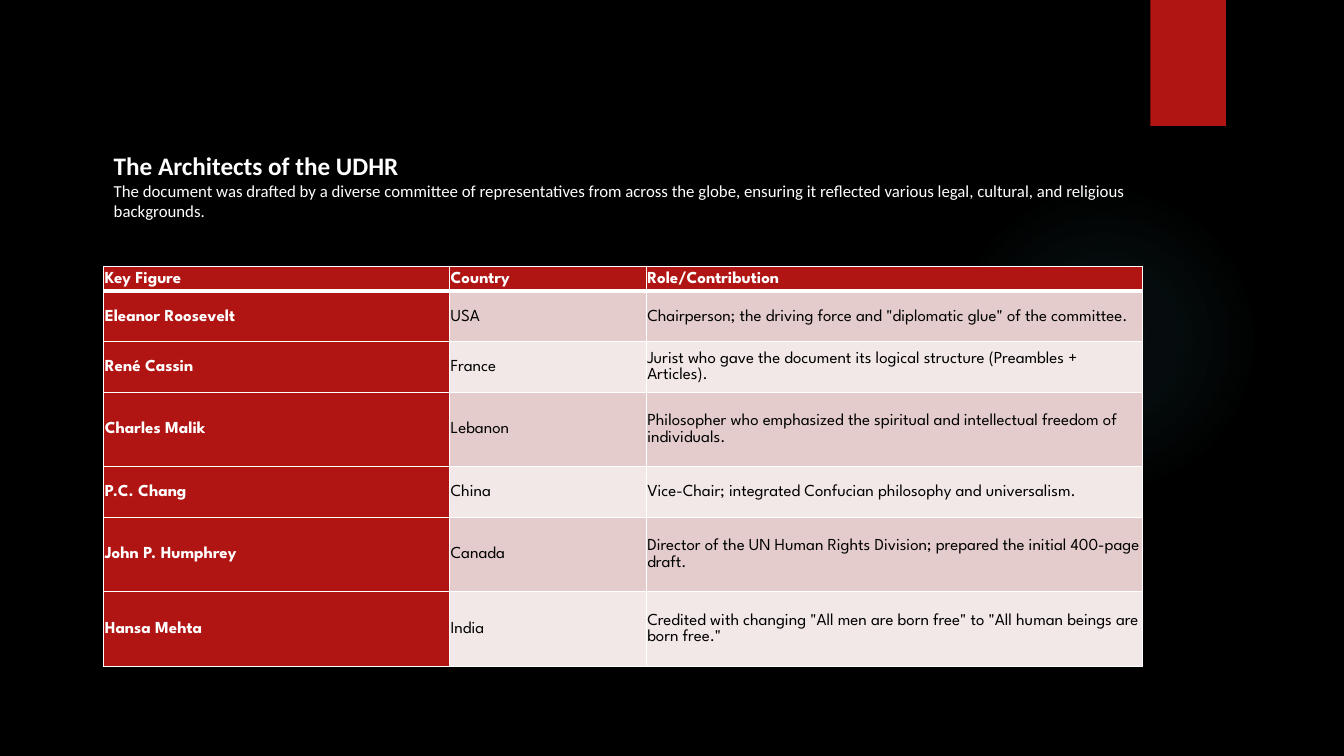
from dataclasses import dataclass

from lxml import etree
from pptx import Presentation
from pptx.dml.color import RGBColor
from pptx.enum.shapes import MSO_SHAPE
from pptx.enum.text import MSO_ANCHOR
from pptx.oxml import parse_xml
from pptx.oxml.ns import nsdecls, qn
from pptx.util import Inches, Pt


@dataclass(frozen=True)
class Theme:
    """Colours, fonts and type sizes of the slide."""
    black: str = "000000"
    white: str = "FFFFFF"
    red: str = "B01513"
    glow: str = "50B9C1"
    bands: tuple = ("E4CCCC", "F2E8E7")
    text_font: str = "Calibri"
    table_font: str = "League Spartan"
    title_size: int = 18
    body_size: int = 12


THEME = Theme()
COLUMN_WIDTHS = (3.43, 1.95, 4.92)
ROW_HEIGHTS = (0.25, 0.5, 0.5, 0.74, 0.5, 0.74, 0.74)
FIGURES = (
    ("Key Figure", "Country", "Role/Contribution"),
    ("Eleanor Roosevelt", "USA", 'Chairperson; the driving force and "diplomatic glue" of the committee.'),
    ("René Cassin", "France", "Jurist who gave the document its logical structure (Preambles + Articles)."),
    ("Charles Malik", "Lebanon", "Philosopher who emphasized the spiritual and intellectual freedom of individuals."),
    ("P.C. Chang", "China", "Vice-Chair; integrated Confucian philosophy and universalism."),
    ("John P. Humphrey", "Canada", "Director of the UN Human Rights Division; prepared the initial 400-page draft."),
    ("Hansa Mehta", "India",
     'Credited with changing "All men are born free" to "All human beings are born free."'),
)
TITLE = "The Architects of the UDHR"
INTRO = ("The document was drafted by a diverse committee of representatives from across the globe, "
         "ensuring it reflected various legal, cultural, and religious backgrounds.")


def style_font(font, name, size, color, bold):
    """Set the typeface, size, colour and weight of a font."""
    font.name = name
    font.size = Pt(size)
    font.bold = bold
    font.color.rgb = RGBColor.from_string(color)


def add_plain_shape(page, kind, left, top, width, height, color):
    """Add a filled shape without line or shadow."""
    shape = page.shapes.add_shape(kind, Inches(left), Inches(top), Inches(width), Inches(height))
    shape.shadow.inherit = False
    shape.fill.solid()
    shape.fill.fore_color.rgb = RGBColor.from_string(color)
    shape.line.fill.background()
    return shape


def add_glow(page):
    """Add the faint round glow on the right."""
    glow = add_plain_shape(page, MSO_SHAPE.OVAL, 9.41, 1.83, 3.08, 3.08, THEME.glow)
    stops = "".join(
        f'<a:gs pos="{position * 1000}"><a:srgbClr val="{THEME.glow}">'
        f'<a:alpha val="{opacity * 1000}"/></a:srgbClr></a:gs>'
        for position, opacity in ((0, 7), (36, 6), (69, 0)))
    gradient = parse_xml(
        f'<a:gradFill {nsdecls("a")} rotWithShape="1"><a:gsLst>{stops}</a:gsLst><a:path path="circle">'
        '<a:fillToRect l="50000" t="50000" r="50000" b="50000"/></a:path></a:gradFill>')
    properties = glow.fill._xPr
    properties.replace(properties.find(qn("a:solidFill")), gradient)


def add_heading(page):
    """Add the title with its introduction."""
    box = page.shapes.add_textbox(Inches(1.03), Inches(1.44), Inches(10.3), Inches(0.81))
    frame = box.text_frame
    frame.word_wrap = True
    frame.vertical_anchor = MSO_ANCHOR.MIDDLE
    frame.text = f"{TITLE}\n{INTRO}"
    title, intro = frame.paragraphs
    style_font(title.font, THEME.text_font, THEME.title_size, THEME.white, True)
    style_font(intro.font, THEME.text_font, THEME.body_size, THEME.white, False)


def add_borders(cell, widths):
    """Draw white borders, with widths in points for each side."""
    properties = cell._tc.get_or_add_tcPr()
    for index, (side, width) in enumerate(widths.items()):
        line = etree.Element(qn(f"a:ln{side}"), w=str(Pt(width)))
        fill = etree.SubElement(line, qn("a:solidFill"))
        etree.SubElement(fill, qn("a:srgbClr"), val=THEME.white)
        properties.insert(index, line)


def fill_cell(cell, text, row, column):
    """Write and style one table cell by its place in the grid."""
    heading = row == 0 or column == 0
    fill = THEME.red if heading else THEME.bands[(row - 1) % 2]
    cell.fill.solid()
    cell.fill.fore_color.rgb = RGBColor.from_string(fill)
    cell.margin_left = cell.margin_right = cell.margin_top = cell.margin_bottom = Inches(0.01)
    cell.vertical_anchor = MSO_ANCHOR.MIDDLE
    cell.text = text
    para = cell.text_frame.paragraphs[0]
    para.line_spacing = 1.07
    para.space_after = Pt(8)
    style_font(para.font, THEME.table_font, THEME.body_size,
               THEME.white if heading else THEME.black, heading)
    add_borders(cell, {"L": 1, "R": 1, "T": 3 if row == 1 else 1, "B": 3 if row == 0 else 1})


def add_figures_table(page):
    """Add the table of key figures."""
    table = page.shapes.add_table(
        len(ROW_HEIGHTS), len(COLUMN_WIDTHS), Inches(1.03), Inches(2.64),
        Inches(sum(COLUMN_WIDTHS)), Inches(sum(ROW_HEIGHTS))).table
    table.first_col = True
    for column, width in zip(table.columns, COLUMN_WIDTHS):
        column.width = Inches(width)
    for row, height in zip(table.rows, ROW_HEIGHTS):
        row.height = Inches(height)
    for row, texts in enumerate(FIGURES):
        for column, text in enumerate(texts):
            fill_cell(table.cell(row, column), text, row, column)


def main():
    """Build the slide and save the deck."""
    deck = Presentation()
    deck.slide_width = Inches(13.33)
    deck.slide_height = Inches(7.5)
    page = deck.slides.add_slide(deck.slide_layouts[6])
    page.background.fill.solid()
    page.background.fill.fore_color.rgb = RGBColor.from_string(THEME.black)
    add_glow(page)
    add_plain_shape(page, MSO_SHAPE.RECTANGLE, 11.41, 0, 0.75, 1.25, THEME.red)
    add_figures_table(page)
    add_heading(page)
    deck.save("out.pptx")


if __name__ == "__main__":
    main()
